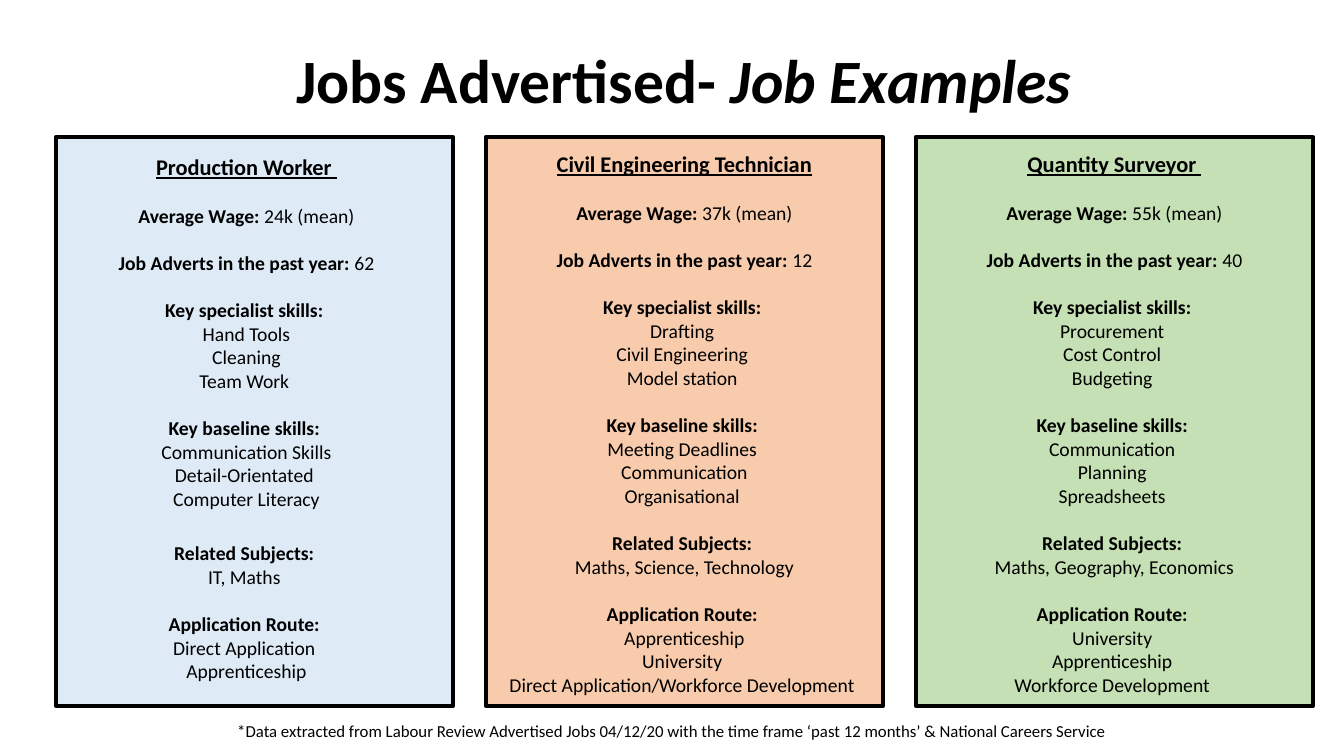
import pptx
import pptx.util
import pptx.dml.color
import pptx.enum.shapes
import pptx.enum.text

SCALE = 12192000 / 1344


def px(length):
    return pptx.util.Emu(round(length * SCALE))


def style(run, size, bold=False, italic=False, underline=False):
    run.font.name = "Calibri"
    run.font.size = pptx.util.Pt(size)
    run.font.bold = bold
    run.font.italic = italic
    run.font.underline = underline
    run.font.color.rgb = pptx.dml.color.RGBColor.from_string("000000")


presentation = pptx.Presentation()
presentation.slide_width = px(1344)
presentation.slide_height = px(756)
slide = presentation.slides.add_slide(presentation.slide_layouts[6])

title = slide.shapes.add_textbox(px(24), px(45), px(1320), px(71))
title.text_frame.word_wrap = True
paragraph = title.text_frame.paragraphs[0]
paragraph.alignment = pptx.enum.text.PP_ALIGN.CENTER
paragraph.line_spacing = 0.9
for text, italic in [("Jobs Advertised- ", False), ("Job Examples", True)]:
    run = paragraph.add_run()
    run.text = text
    style(run, 44, bold=True, italic=italic)

jobs = [
    {
        "name": "Production Worker ", "fill": "DEEBF7",
        "text_left": 48, "text_top": 148, "subjects_gap": 22,
        "wage": "24k (mean)", "adverts": "62",
        "specialist": ["Hand Tools", "Cleaning", "Team Work "],
        "baseline": ["Communication Skills", "Detail-Orientated ", "Computer Literacy"],
        "subjects": ["IT, Maths "],
        "route": ["Direct Application ", "Apprenticeship"],
    },
    {
        "name": "Civil Engineering Technician", "fill": "F8CBAD",
        "text_left": 486, "text_top": 145, "subjects_gap": 17,
        "wage": "37k (mean)", "adverts": "12",
        "specialist": ["Drafting ", "Civil Engineering ", "Model station "],
        "baseline": ["Meeting Deadlines ", "Communication", "Organisational "],
        "subjects": ["Maths, Science, Technology"],
        "route": ["Apprenticeship", "University ", "Direct Application/Workforce Development "],
    },
    {
        "name": "Quantity Surveyor ", "fill": "C5E0B4",
        "text_left": 916, "text_top": 145, "subjects_gap": 17,
        "wage": "55k (mean)", "adverts": "40",
        "specialist": ["Procurement ", "Cost Control ", "Budgeting "],
        "baseline": ["Communication ", "Planning ", "Spreadsheets "],
        "subjects": ["Maths, Geography, Economics"],
        "route": ["University ", "Apprenticeship ", "Workforce Development "],
    },
]

for column, job in enumerate(jobs):
    card = slide.shapes.add_shape(
        pptx.enum.shapes.MSO_SHAPE.RECTANGLE, px(56 + 430 * column), px(137), px(397), px(569))
    card.shadow.inherit = False
    card.fill.solid()
    card.fill.fore_color.rgb = pptx.dml.color.RGBColor.from_string(job["fill"])
    card.line.color.rgb = pptx.dml.color.RGBColor.from_string("000000")
    card.line.width = pptx.util.Pt(3)

    details = slide.shapes.add_textbox(px(job["text_left"]), px(job["text_top"]), px(397), px(561))
    frame = details.text_frame
    frame.word_wrap = True
    heading = frame.paragraphs[0]
    heading.text = job["name"]
    heading.alignment = pptx.enum.text.PP_ALIGN.CENTER
    style(heading.runs[0], 16, bold=True, underline=True)

    sections = [
        ("Average Wage: ", job["wage"], [], 17),
        ("Job Adverts in the past year: ", job["adverts"], [], 17),
        ("Key specialist skills: ", "", job["specialist"], 17),
        ("Key baseline skills: ", "", job["baseline"], 17),
        ("Related Subjects: ", "", job["subjects"], job["subjects_gap"]),
        ("Application Route: ", "", job["route"], 17),
    ]
    for label, value, entries, gap in sections:
        paragraph = frame.add_paragraph()
        paragraph.text = label
        paragraph.alignment = pptx.enum.text.PP_ALIGN.CENTER
        paragraph.space_before = pptx.util.Pt(gap)
        style(paragraph.runs[0], 14, bold=True)
        if value:
            run = paragraph.add_run()
            run.text = value
            style(run, 14)
        for entry in entries:
            paragraph = frame.add_paragraph()
            paragraph.text = entry
            paragraph.alignment = pptx.enum.text.PP_ALIGN.CENTER
            style(paragraph.runs[0], 14)

footnote = slide.shapes.add_textbox(px(0), px(716), px(1344), px(30))
footnote.text_frame.word_wrap = True
paragraph = footnote.text_frame.paragraphs[0]
paragraph.text = (
    "*Data extracted from Labour Review Advertised Jobs 04/12/20 with the time frame "
    "‘past 12 months’ & National Careers Service")
paragraph.alignment = pptx.enum.text.PP_ALIGN.CENTER
style(paragraph.runs[0], 12)

presentation.save("out.pptx")
